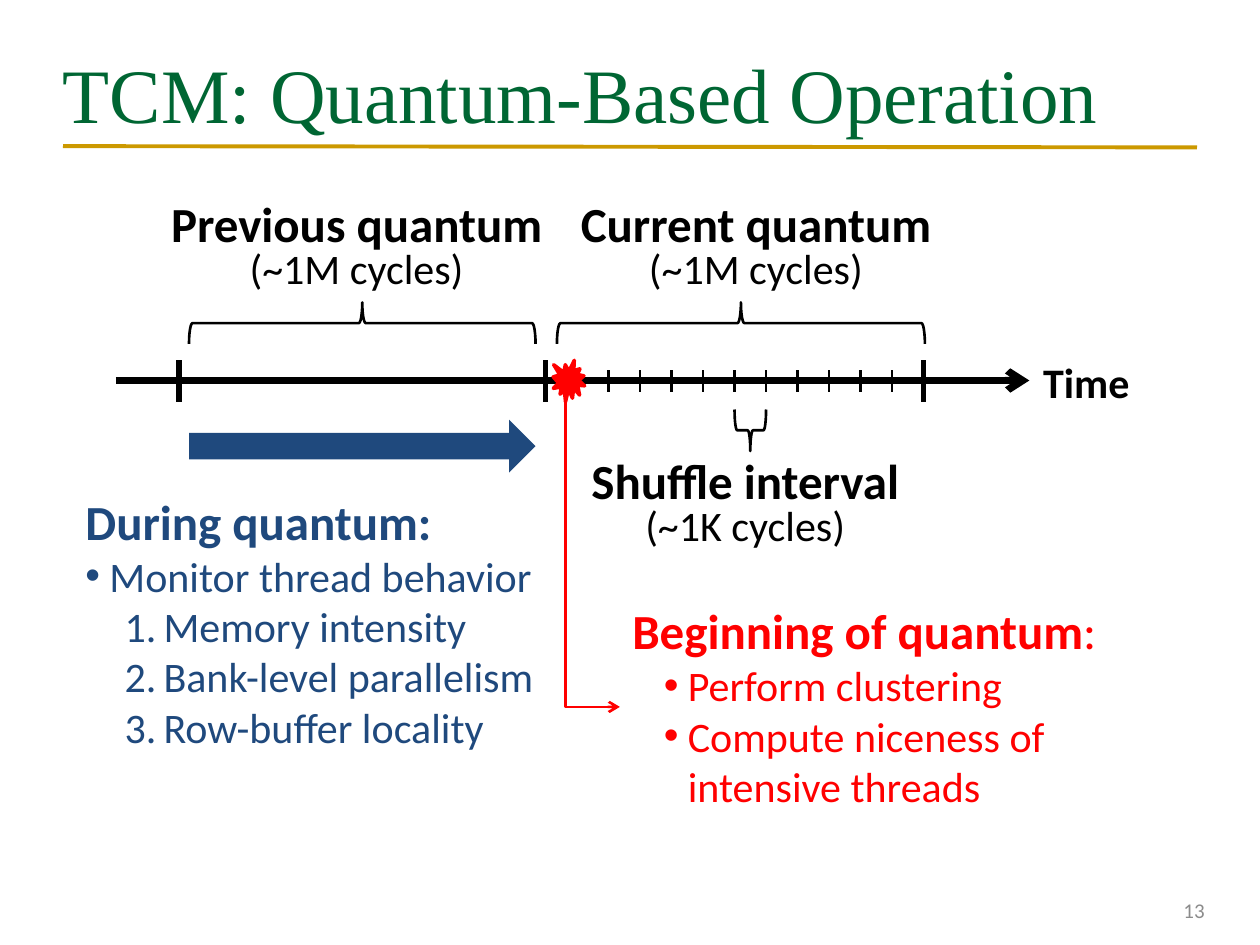
from lxml.etree import SubElement
from pptx import Presentation
from pptx.dml.color import RGBColor
from pptx.enum.shapes import MSO_CONNECTOR as LINK, MSO_SHAPE as SHAPE
from pptx.enum.text import MSO_ANCHOR, PP_ALIGN
from pptx.oxml.ns import qn
from pptx.util import Pt

PX = 9144
HEX = {
    "black": "000000", "blue": "1F497D", "red": "FF0000",
    "green": "006633", "gold": "CC9900", "gray": "8C8C8C",
}


def rgb(name):
    return RGBColor.from_string(HEX[name])


def px(*nums):
    return [round(n * PX) for n in nums]


def ink(line, color, width):
    line.color.rgb = rgb(color)
    line.width = Pt(width)


def rule(slide, x1, y1, x2, y2, color, width, head=False, kind=LINK.STRAIGHT):
    link = slide.shapes.add_connector(kind, *px(x1, y1, x2, y2))
    ink(link.line, color, width)
    if head:
        SubElement(link.line._get_or_add_ln(), qn("a:tailEnd"), type="arrow")
    SubElement(link.element.spPr, qn("a:effectLst"))
    return link


def form(slide, kind, x, y, w, h, fill=None, line=None, width=1.5, turn=0):
    shape = slide.shapes.add_shape(kind, *px(x, y, w, h))
    shape.shadow.inherit = False
    shape.rotation = turn
    if fill:
        shape.fill.solid()
        shape.fill.fore_color.rgb = rgb(fill)
    else:
        shape.fill.background()
    if line:
        ink(shape.line, line, width)
    else:
        shape.line.fill.background()
    return shape


def brace(slide, x, y, w, h, turn):
    form(slide, SHAPE.LEFT_BRACE, x + (w - h) / 2, y + (h - w) / 2, h, w,
         line="black", turn=turn)


def text_box(slide, x, y, w, h):
    frame = slide.shapes.add_textbox(*px(x, y, w, h)).text_frame
    frame.word_wrap = True
    return frame


def bullet(para, color, left, hang, number):
    props = para._p.get_or_add_pPr()
    props.set("marL", str(left * PX))
    props.set("indent", str(-hang * PX))
    tint = SubElement(props, qn("a:buClr"))
    SubElement(tint, qn("a:srgbClr"), val=HEX[color])
    if number:
        SubElement(props, qn("a:buAutoNum"), type="arabicPeriod")
    else:
        SubElement(props, qn("a:buFont"), typeface="Arial")
        SubElement(props, qn("a:buChar"), char="•")


def write(frame, text, size, color, bold=False, face="Calibri", mark=None):
    first = frame.paragraphs[0]
    para = frame.add_paragraph() if first.runs else first
    if mark:
        bullet(para, color, *mark)
    para.add_run().text = text
    font = para.font
    font.name, font.size, font.bold = face, Pt(size), bold
    font.color.rgb = rgb(color)
    return para


def label(slide, x, y, w, h, name, span):
    frame = text_box(slide, x, y, w, h)
    for text, size, bold in ((name, 28, True), (span, 24, False)):
        para = write(frame, text, size, "black", bold)
        para.alignment = PP_ALIGN.CENTER
        para.line_spacing = 0.8


def header(slide, x, y, w, h):
    rule(slide, x, y + 86, x + w, y + h, "gold", 2.25)
    frame = text_box(slide, x, y, w, h)
    frame.margin_left = frame.margin_right = 0
    frame.vertical_anchor = MSO_ANCHOR.MIDDLE
    write(frame, "TCM: Quantum-Based Operation", 44, "green",
          face="Times New Roman")


def footer(slide, x, y, w, h):
    frame = text_box(slide, x, y, w, h)
    frame.vertical_anchor = MSO_ANCHOR.MIDDLE
    write(frame, "13", 12, "gray").alignment = PP_ALIGN.RIGHT


def timeline(slide, x, y, w, h):
    axis = y + 144
    rule(slide, x, axis, x + w, axis, "black", 4, head=True)
    write(text_box(slide, x + w + 1, axis - 24, 90, 50), "Time", 24,
          "black", True)
    for tick in (50, 341, 641):
        rule(slide, x + tick, axis - 16, x + tick, axis + 17, "black", 3)
    for step in range(10):
        tick = x + 391 + 25 * step
        rule(slide, tick, axis - 8, tick, axis + 9, "black", 1.5)
    brace(slide, x + 58, y + 82, 275, 33, 90)
    brace(slide, x + 350, y + 82, 292, 33, 90)
    brace(slide, x + 491, y + 167, 25, 33, 270)
    label(slide, x + 25, y, 332, 81, "Previous quantum", "(~1M cycles)")
    label(slide, x + 358, y, 300, 81, "Current quantum", "(~1M cycles)")
    label(slide, x + 358, y + 204, 283, 81, "Shuffle interval", "(~1K cycles)")
    form(slide, SHAPE.RIGHT_ARROW, x + 58, y + 175, 275, 42, "blue")


def during(slide, x, y, w, h):
    frame = text_box(slide, x, y, w, h)
    write(frame, "During quantum:", 28, "blue", True)
    write(frame, "Monitor thread behavior", 24, "blue", mark=(19, 19, False))
    for text in ("Memory intensity", "Bank-level parallelism",
                 "Row-buffer locality"):
        write(frame, text, 24, "blue", mark=(62, 31, True))


def begin(slide, x, y, w, h):
    form(slide, SHAPE.EXPLOSION1, x, y, 25, 33, "red", "red", 2)
    wide, tall = 43, 242
    left, top = x + 10 + (wide - tall) / 2, y + 33 + (tall - wide) / 2
    bend = rule(slide, left + tall, top, left, top + wide, "red", 1.5,
                head=True, kind=LINK.ELBOW)
    bend.element.spPr.find(qn("a:prstGeom")).set("prst", "bentConnector2")
    bend.element.spPr.find(qn("a:xfrm")).set("rot", str(270 * 60000))
    frame = text_box(slide, x + 53, y + 186, w - 53, h - 186)
    para = write(frame, "Beginning of quantum", 28, "red", True)
    colon = para.add_run()
    colon.text = ":"
    colon.font.bold = False
    for text in ("Perform clustering", "Compute niceness of intensive threads"):
        write(frame, text, 24, "red", mark=(44, 19, False))


def main():
    deck = Presentation()
    deck.slide_width, deck.slide_height = px(1000, 750)
    slide = deck.slides.add_slide(deck.slide_layouts[6])
    header(slide, 50, 30, 900, 87)
    timeline(slide, 92, 158, 725, 285)
    during(slide, 58, 385, 400, 219)
    begin(slide, 439, 286, 528, 364)
    footer(slide, 733, 702, 233, 40)
    deck.save("out.pptx")


if __name__ == "__main__":
    main()
